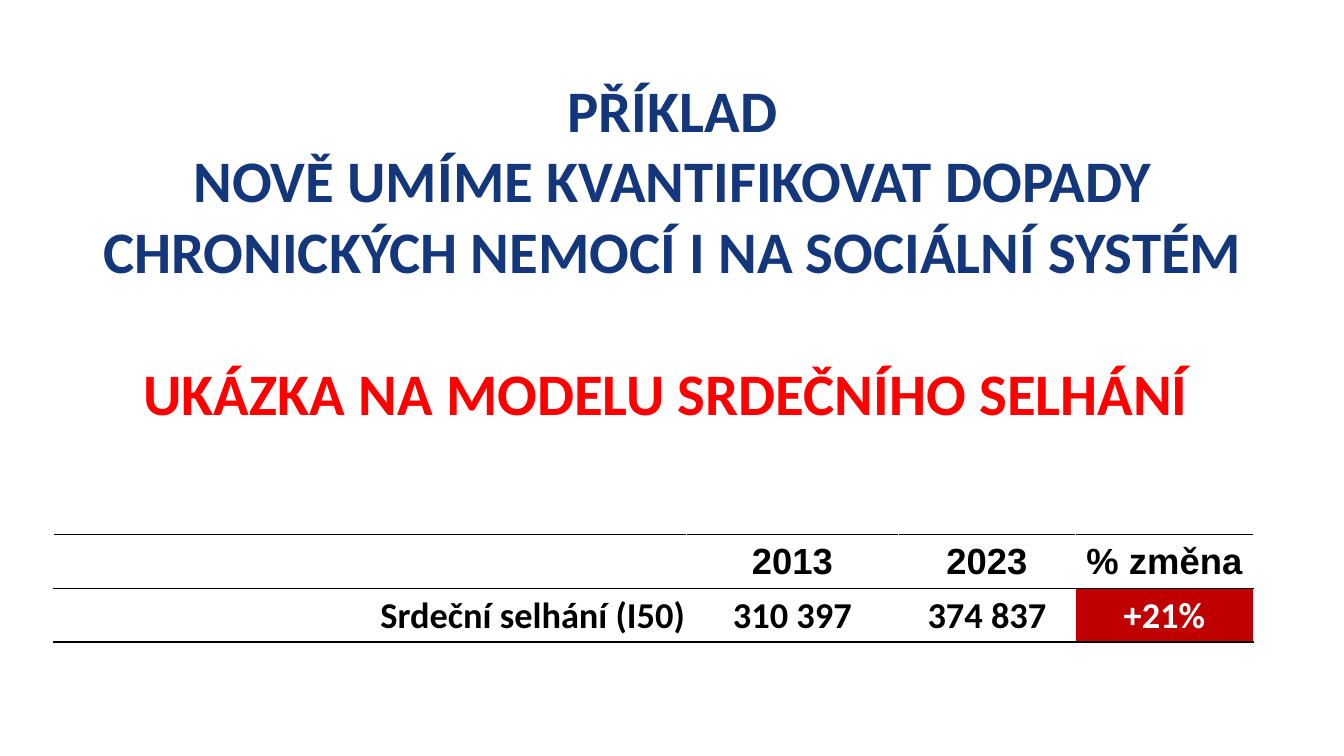
from lxml import etree
from pptx import Presentation
from pptx.dml.color import RGBColor
from pptx.enum.text import MSO_ANCHOR, MSO_AUTO_SIZE, PP_ALIGN
from pptx.oxml.ns import qn
from pptx.util import Inches, Pt

CENTER, RIGHT = PP_ALIGN.CENTER, PP_ALIGN.RIGHT
MIDDLE, TOP = MSO_ANCHOR.MIDDLE, MSO_ANCHOR.TOP
NO_FIT = MSO_AUTO_SIZE.NONE

NAVY, RED, CRIMSON = "14377B", "FF0000", "C00000"
BLACK, WHITE = "000000", "FFFFFF"
HEADS = ["", "2013", "2023", "% změna"]
VALUES = ["Srdeční selhání (I50)", "310 397", "374 837", "+21%"]
LINES = [
    ("PŘÍKLAD", NAVY),
    ("NOVĚ UMÍME KVANTIFIKOVAT DOPADY CHRONICKÝCH NEMOCÍ I NA SOCIÁLNÍ SYSTÉM", NAVY),
    ("UKÁZKA NA MODELU SRDEČNÍHO SELHÁNÍ ", RED),
]


def rgb(code):
    """Turn a hex string into a colour."""
    return RGBColor.from_string(code)


def style(para, size, face, color, align=CENTER):
    """Format a paragraph and its runs in bold."""
    para.alignment = align
    for run in para.runs:
        font = run.font
        font.size, font.name, font.bold = Pt(size), face, True
        font.color.rgb = rgb(color)


def add_title(slide):
    """Fill the title placeholder with the heading lines."""
    title = slide.shapes.title
    title.left, title.top = Inches(0.16), Inches(0.68)
    title.width, title.height = Inches(13.02), Inches(3.64)
    frame = title.text_frame
    frame.word_wrap, frame.auto_size = True, NO_FIT
    frame.vertical_anchor = TOP
    frame.text = "\n".join(text for text, color in LINES)
    for para, (text, color) in zip(frame.paragraphs, LINES):
        style(para, 42, "Calibri", color)
    frame.paragraphs[-1].space_before = Pt(51)


def add_edge(cell, side, color):
    """Draw one border of a cell."""
    props = cell._tc.get_or_add_tcPr()
    line = etree.SubElement(props, qn("a:ln" + side), w=str(Pt(1)))
    fill = etree.SubElement(line, qn("a:solidFill"))
    etree.SubElement(fill, qn("a:srgbClr"), val=color)


def fill_cell(cell, text, face, color, align, back, sides):
    """Write and format one table cell."""
    cell.text = text
    cell.vertical_anchor = MIDDLE
    cell.margin_left = cell.margin_right = cell.margin_top = Inches(0.01)
    cell.margin_bottom = 0
    style(cell.text_frame.paragraphs[0], 26, face, color, align)
    for side in sides:
        add_edge(cell, side, WHITE if side in "LR" else BLACK)
    if back:
        cell.fill.solid()
        cell.fill.fore_color.rgb = rgb(back)
    else:
        cell.fill.background()


def add_grid(slide):
    """Add the table of patient counts."""
    frame = slide.shapes.add_table(
        2, 4, Inches(0.53), Inches(5.3), Inches(11.9), Inches(1.07))
    table = frame.table
    table.first_row = table.horz_banding = False
    for col, width in zip(table.columns, [6.28, 2.1, 1.76, 1.76]):
        col.width = Inches(width)
    for i, (head, value) in enumerate(zip(HEADS, VALUES)):
        last = i == len(HEADS) - 1
        fill_cell(table.cell(0, i), head, "Arial", BLACK, CENTER, None, "LRTB")
        fill_cell(table.cell(1, i), value, "Calibri", WHITE if last else BLACK,
                  CENTER if i else RIGHT, CRIMSON if last else WHITE, "TB")


def main():
    """Build the slide and save it."""
    deck = Presentation()
    deck.slide_width, deck.slide_height = Inches(13.33), Inches(7.5)
    slide = deck.slides.add_slide(deck.slide_layouts[5])
    add_title(slide)
    add_grid(slide)
    deck.save("out.pptx")


if __name__ == "__main__":
    main()
